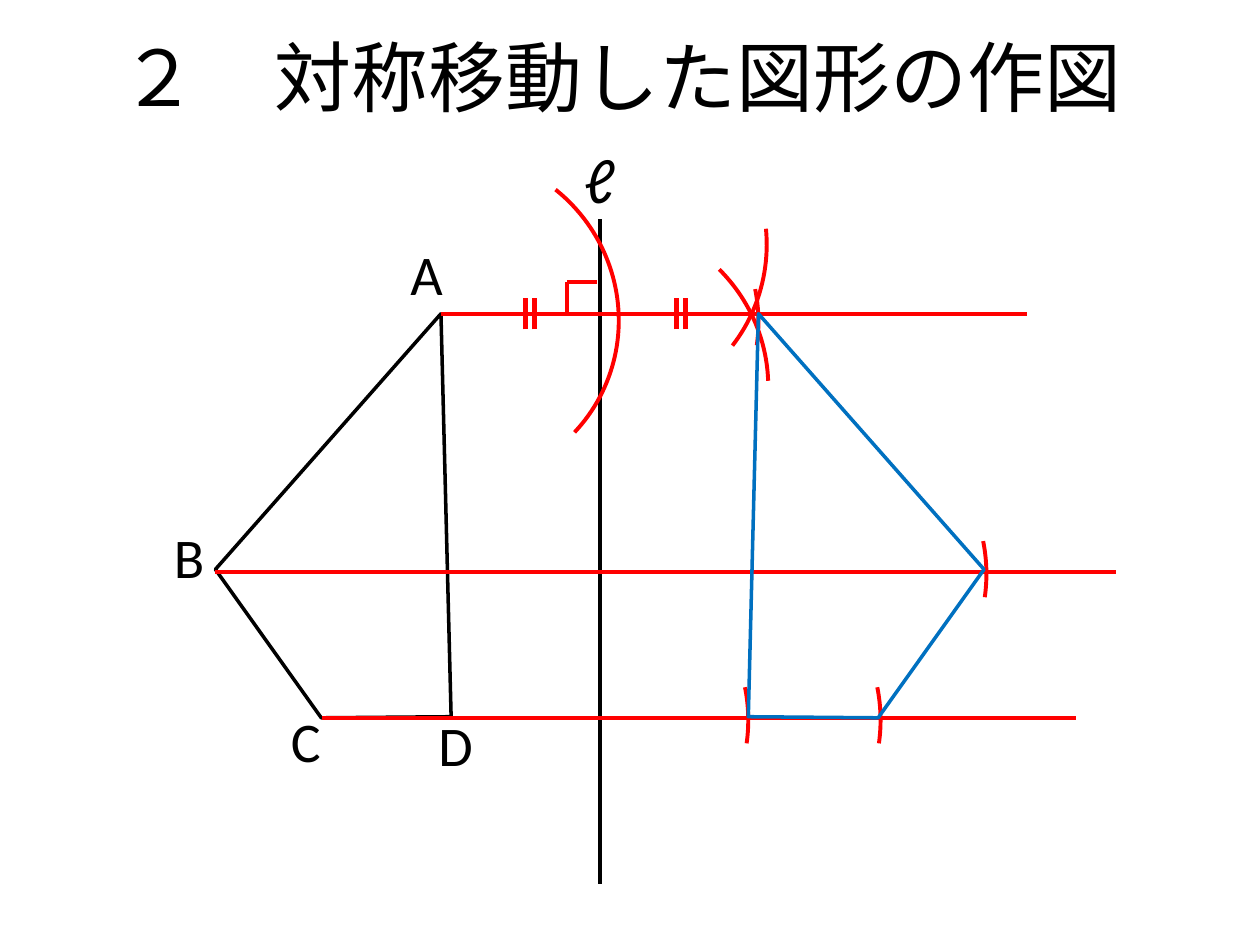
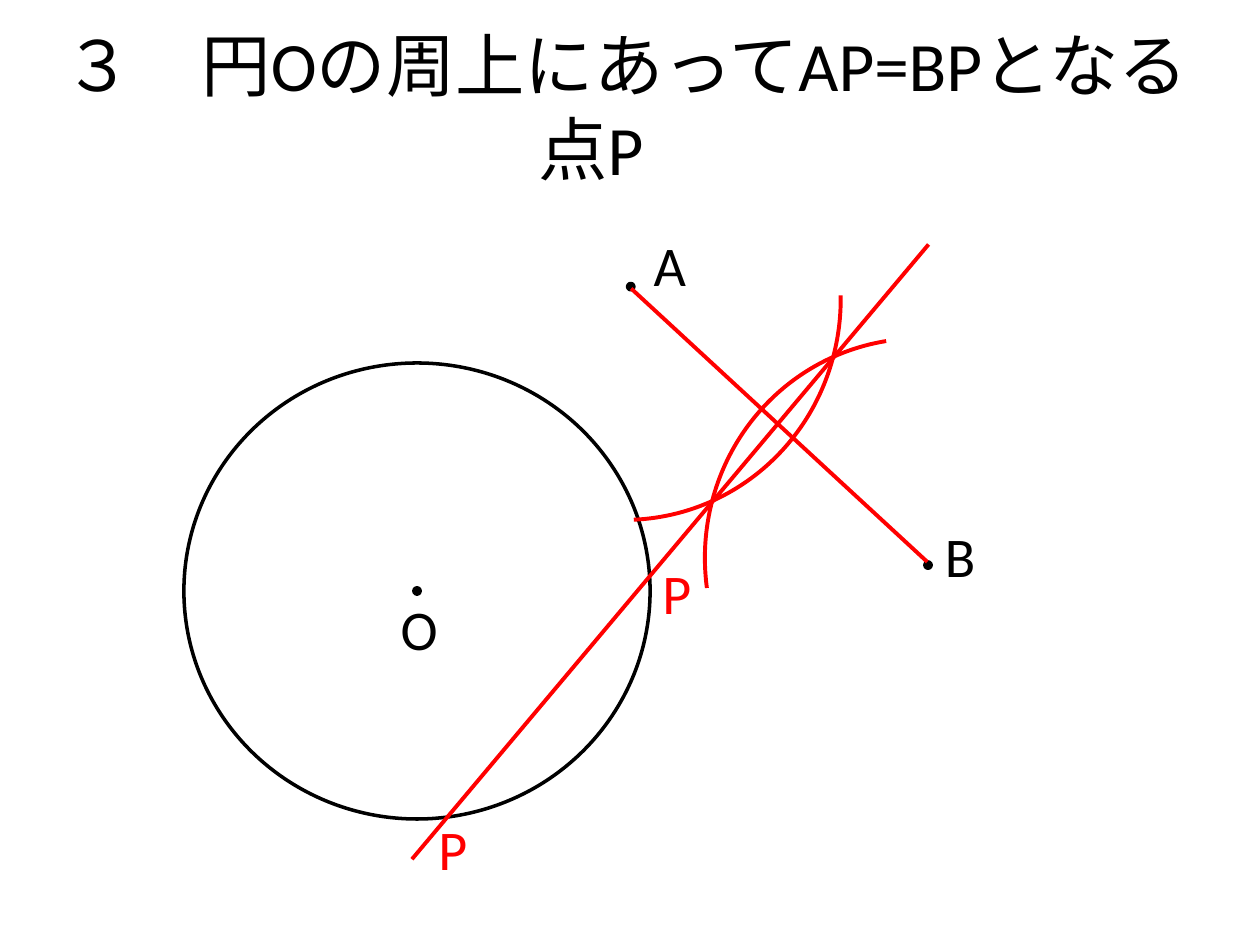
from dataclasses import dataclass
from lxml import etree
from pptx import Presentation
from pptx import util as u
from pptx.dml.color import RGBColor
from pptx.enum import shapes, text
from pptx.oxml.ns import qn


@dataclass
class Theme:
    font: str = "Calibri"
    black: str = "000000"
    red: str = "FF0000"
    blue: str = "0070C0"
    mark: float = 32      # point labels
    axis: float = 36      # axis label
    edge: float = 2       # figure outlines
    draft: float = 2.25   # construction lines
    tick: float = 3       # equal-length ticks


T = Theme()
G = shapes.MSO_SHAPE

# Mirror slide: text, box, size, line pitch
HEAD1 = ("２　対称移動した図形の作図", (31, 9.4, 648, 67.7), 44, None)
AXIS = 342.72
KITE = [(252, 179.3), (123.1, 325.4), (183.6, 410.2), (257.8, 409.6)]
MARKS1 = [("A", 227.5, 133.2, 33.1), ("B", 92.2, 295.2, 32.4),
          ("C", 159.1, 400.3, 31.7), ("D", 243.4, 402.5, 34.6)]
RAYS = [(252, 179.3, 586.8), (123.1, 326.9, 637.9), (184.3, 410.4, 614.9)]
RING1 = (190.8, 187.9)
# Arcs: left, top, rotation, start angle, end angle
ARCS1 = [(163.4, 87.8, 39.5, 269.16, 3.7),
         (248.4, 44.6, 60.7, 294.54, 337.58),
         (248.4, 126, 21, 294.54, 337.58)]
ARCS1 += [(x, y, 48.2, 301.22, 320.75) for x, y in
          [(243.4, 88.6), (313.2, 316.1), (373.7, 232.6), (237.6, 316.1)]]
TICKS = [300.2, 386.6]
GAP = 5.04
CORNER = 18

# Circle slide
HEAD2 = ("３　円Oの周上にあってAP=BPとなる点P　", (20.2, 15.1, 674.6, 90), 39.6, 48)
DISC = (105.1, 207.4, 266.4, 260.6)
DOTS = [(DISC[0] + DISC[2] / 2, DISC[1] + DISC[3] / 2), (360.4, 163.8), (530.3, 322.9)]
MARKS2 = [("O", 221.8, 336.2, 36), ("A", 366.5, 128.2, 33.1), ("B", 532.8, 294.5, 32.4)]
HITS = [("P", 371.5, 315.4, 31), ("P", 243.4, 462.2, 31)]
RING2 = (255.6, 249.8)
ARCS2 = [(227.5, 44.6, 75.8, 283.89, 11.12), (400.3, 195.8, 249.1, 283.89, 11.12)]
CHORD = (360.7, 164.9, 529.9, 321.1)
SPLIT = (530.6, 139.7, 235.4, 491)


def ink(shape, color, width):
    shape.line.color.rgb = RGBColor.from_string(color)
    shape.line.width = u.Pt(width)


def line(slide, x1, y1, x2, y2, color=T.red, width=T.draft):
    link = slide.shapes.add_connector(
        shapes.MSO_CONNECTOR.STRAIGHT, *map(u.Pt, (x1, y1, x2, y2)))
    ink(link, color, width)
    etree.SubElement(link._element.spPr, qn("a:effectLst"))


def form(slide, kind, box, color, width, fill=None):
    shape = slide.shapes.add_shape(kind, *map(u.Pt, box))
    shape.shadow.inherit = False
    if fill:
        shape.fill.solid()
        shape.fill.fore_color.rgb = RGBColor.from_string(fill)
    else:
        shape.fill.background()
    ink(shape, color, width)
    return shape


def arcs(slide, ring, items):
    for x, y, turn, start, end in items:
        arc = form(slide, G.ARC, (x, y, *ring), T.red, T.draft)
        arc.rotation = turn
        # Angles are stored in 1/60000 degree, adjustments in 1/100000
        arc.adjustments[0], arc.adjustments[1] = start * 0.6, end * 0.6


def outline(slide, dots, color):
    pts = [(u.Pt(x), u.Pt(y)) for x, y in dots]
    pen = slide.shapes.build_freeform(*pts[0], scale=1.0)
    pen.add_line_segments(pts[1:], close=True)
    shape = pen.convert_to_shape()
    shape.shadow.inherit = False
    shape.fill.background()
    ink(shape, color, T.edge)


def write(slide, words, box, size, color=T.black):
    frame = slide.shapes.add_textbox(*map(u.Pt, box)).text_frame
    frame.text = words
    font = frame.paragraphs[0].runs[0].font
    font.name, font.size = T.font, u.Pt(size)
    font.color.rgb = RGBColor.from_string(color)
    return frame


def title(slide, words, box, size, pitch):
    frame = write(slide, words, box, size)
    frame.word_wrap = True
    frame.vertical_anchor = text.MSO_ANCHOR.MIDDLE
    para = frame.paragraphs[0]
    para.alignment = text.PP_ALIGN.CENTER
    if pitch:
        para.line_spacing = u.Pt(pitch)


def label(slide, words, x, y, wide, size=T.mark, color=T.black):
    frame = write(slide, words, (x, y, wide, size * 1.44), size, color)
    frame.word_wrap = False
    frame.auto_size = text.MSO_AUTO_SIZE.SHAPE_TO_FIT_TEXT


def mirror(slide):
    title(slide, *HEAD1)
    # Axis and given figure
    line(slide, AXIS, 125.3, AXIS, 505.4, T.black)
    label(slide, "ℓ", 326.9, 77, 33.1, T.axis)
    outline(slide, KITE, T.black)
    # Construction
    arcs(slide, RING1, ARCS1)
    for x, y, end in RAYS:
        line(slide, x, y, end, y)
    outline(slide, [(2 * AXIS - x, y) for x, y in KITE], T.blue)
    # Equal lengths and right angle
    mid = KITE[0][1]
    for x in TICKS:
        for step in (0, GAP):
            line(slide, x + step, mid + 9, x + step, mid - 9, width=T.tick)
    left, top = AXIS - CORNER - 0.7, mid - CORNER
    line(slide, left, top, AXIS - 1.4, top)
    line(slide, left, mid, left, top)
    for mark in MARKS1:
        label(slide, *mark)


def circle(slide):
    title(slide, *HEAD2)
    # Given circle and points
    form(slide, G.OVAL, DISC, T.black, T.edge)
    for x, y in DOTS:
        form(slide, G.FLOWCHART_CONNECTOR, (x - 1.8, y - 1.8, 3.6, 3.6),
             T.black, T.edge, T.black)
    for mark in MARKS2:
        label(slide, *mark)
    # Perpendicular bisector of AB
    line(slide, *CHORD)
    arcs(slide, RING2, ARCS2)
    line(slide, *SPLIT)
    for mark in HITS:
        label(slide, *mark, color=T.red)


def main():
    deck = Presentation()
    deck.slide_width, deck.slide_height = u.Pt(720), u.Pt(540)
    for draw in (mirror, circle):
        draw(deck.slides.add_slide(deck.slide_layouts[6]))
    deck.save("out.pptx")


if __name__ == "__main__":
    main()
